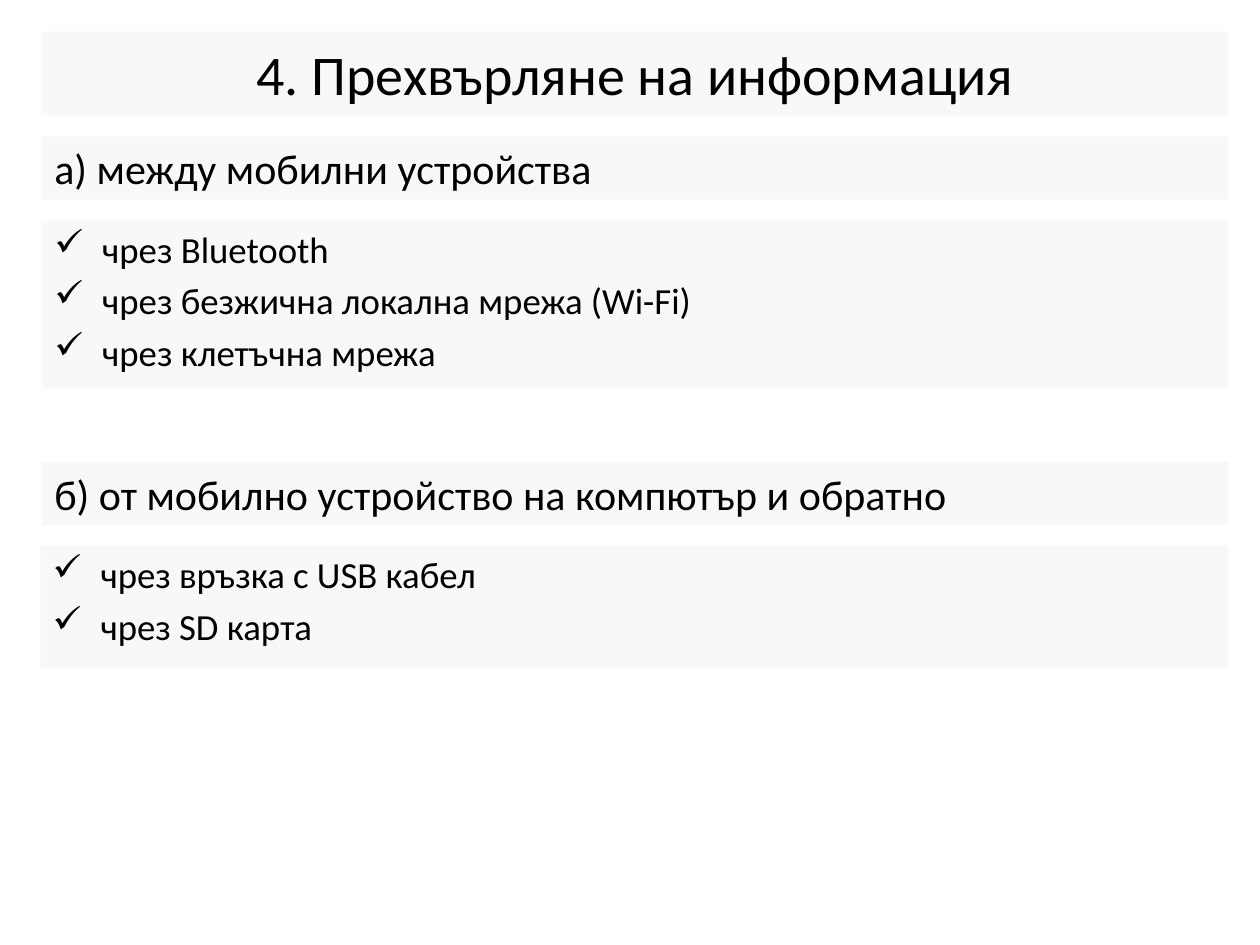
from lxml.etree import SubElement
from pptx import Presentation
from pptx.dml.color import RGBColor
from pptx.enum.shapes import MSO_SHAPE as Shape
from pptx.enum.text import MSO_ANCHOR as Anchor, PP_ALIGN as Align
from pptx.oxml.ns import qn
from pptx.util import Inches, Pt

BLACK = RGBColor(0x00, 0x00, 0x00)
PALE_GREY = RGBColor(0xF2, 0xF2, 0xF2)
CELL = Inches(1) / 12
LEFT, WIDTH = 4, 113  # columns shared by the panels


class PanelSlide:
    """Draws text panels; positions are in cells of a twelfth of an inch."""

    font = "Calibri"
    title_size, heading_size, item_size = 32, 24, 21
    hanging = Inches(0.38)

    def __init__(self, slide):
        self.slide = slide

    def panel(self, top, rows, anchor=Anchor.TOP, left=LEFT, width=WIDTH):
        bounds = [round(cells * CELL) for cells in (left, top, width, rows)]
        box = self.slide.shapes.add_shape(Shape.RECTANGLE, *bounds)
        box.shadow.inherit = False
        box.line.fill.background()
        box.fill.solid()
        box.fill.fore_color.rgb = PALE_GREY
        color = box._element.spPr.find(qn("a:solidFill"))[0]
        SubElement(color, qn("a:alpha"), val="50000")
        frame = box.text_frame
        frame.word_wrap = True
        frame.vertical_anchor = anchor
        return frame

    def add_text(self, para, text, size, align=Align.LEFT):
        para.alignment = align
        span = para.add_run()
        span.text = text
        span.font.name = self.font
        span.font.size = Pt(size)
        span.font.color.rgb = BLACK

    def title(self, text, top, rows):
        frame = self.panel(top, rows, Anchor.MIDDLE)
        self.add_text(frame.paragraphs[0], text, self.title_size, Align.CENTER)

    def heading(self, text, top, rows=6):
        frame = self.panel(top, rows)
        self.add_text(frame.paragraphs[0], text, self.heading_size)

    def checklist(self, items, top, rows, **bounds):
        frame = self.panel(top, rows, **bounds)
        for index, item in enumerate(items):
            para = frame.add_paragraph() if index else frame.paragraphs[0]
            properties = para._p.get_or_add_pPr()
            properties.set("marL", str(self.hanging))
            properties.set("indent", str(-self.hanging))
            SubElement(properties, qn("a:buChar"), char="✓")
            if index:
                para.space_before = Pt(self.item_size * 0.2)
            self.add_text(para, item, self.item_size)


def main():
    deck = Presentation()
    deck.slide_width, deck.slide_height = Inches(10), Inches(7.5)
    page = PanelSlide(deck.slides.add_slide(deck.slide_layouts[6]))

    page.title("4. Прехвърляне на информация", top=3, rows=8)
    page.heading("а) между мобилни устройства", top=13)
    page.checklist(
        ["чрез Bluetooth", "чрез безжична локална мрежа (Wi-Fi)", "чрез клетъчна мрежа"],
        top=21, rows=16)
    page.heading("б) от мобилно устройство на компютър и обратно", top=44)
    page.checklist(
        ["чрез връзка с USB кабел", "чрез SD карта"],
        top=52, rows=11.64, left=3.84, width=113.16)

    deck.save("out.pptx")


if __name__ == "__main__":
    main()
